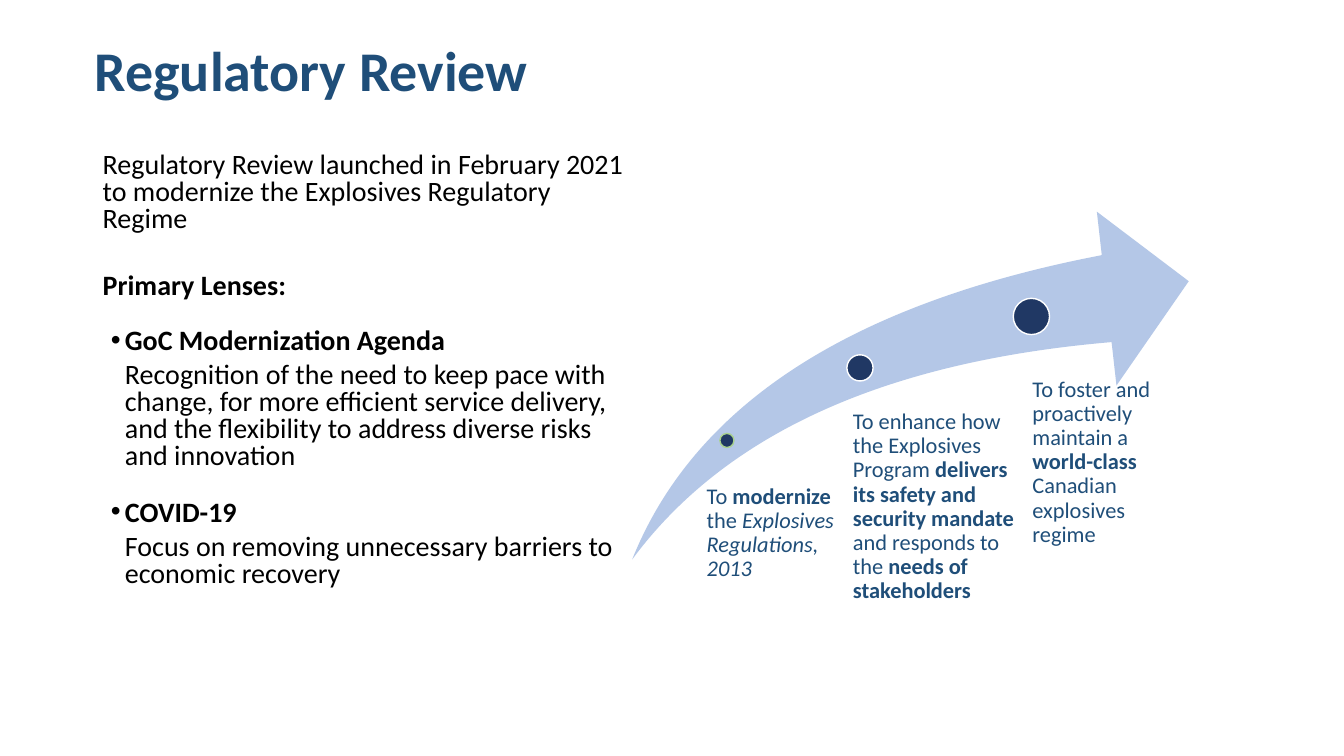
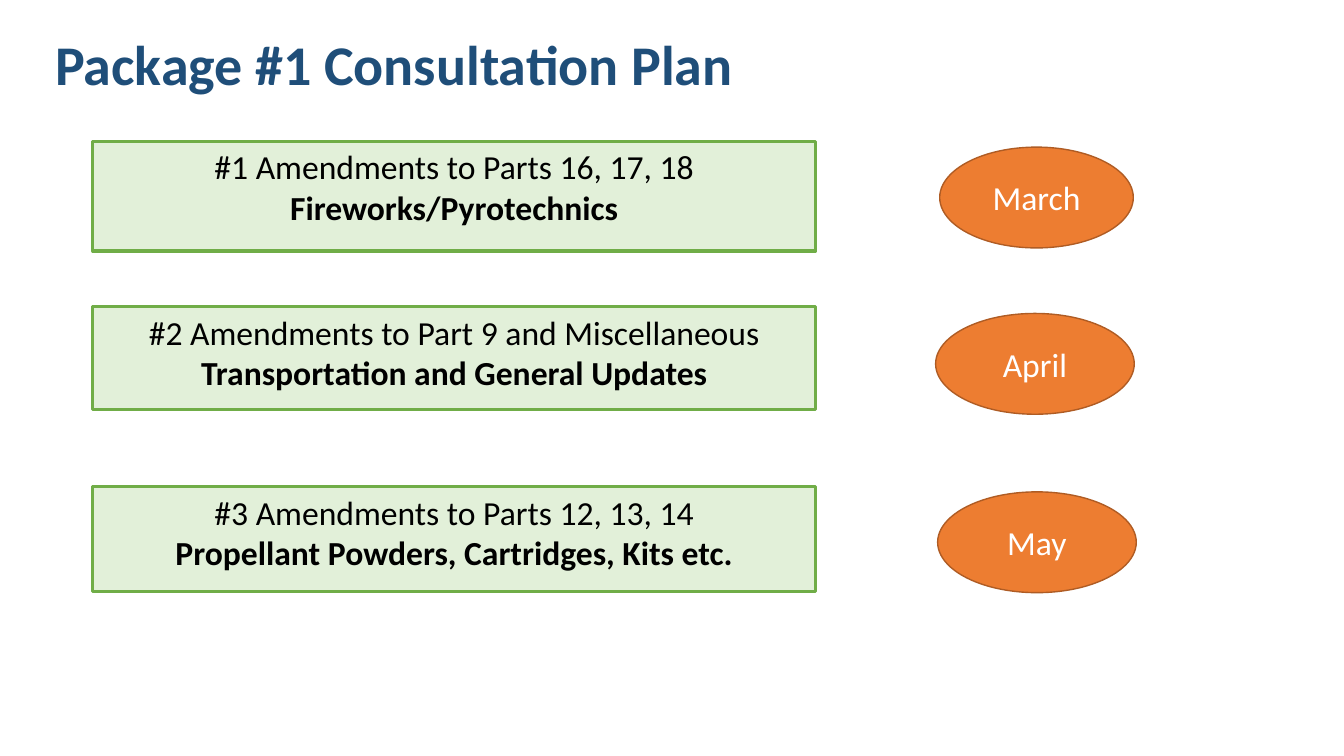
"""Build two slides on the regulatory review and its consultation plan."""
from dataclasses import dataclass

from lxml.etree import SubElement
from pptx import Presentation
from pptx.dml.color import RGBColor
from pptx.enum.shapes import MSO_SHAPE
from pptx.enum.text import MSO_ANCHOR, PP_ALIGN
from pptx.oxml.ns import qn
from pptx.util import Inches, Pt


@dataclass(frozen=True)
class Theme:
    """Hold the colours, font and type sizes that the slides share."""
    font: str = "Calibri"
    navy: str = "1F4E79"
    black: str = "000000"
    white: str = "FFFFFF"
    swoosh: str = "B4C7E7"
    dot: str = "203864"
    dot_green: str = "A9D18E"
    box_fill: str = "E2F0D9"
    box_line: str = "70AD47"
    month_fill: str = "ED7D31"
    month_line: str = "AF5C24"
    title_size: int = 40
    box_size: int = 24
    body_size: int = 20
    label_size: int = 16


THEME = Theme()

BODY = [
    ([("Regulatory Review launched in February 2021 to modernize the Explosives "
       "Regulatory Regime", "")], {}),
    ([("Primary Lenses:", "b")], {"before": 29}),
    ([("GoC Modernization Agenda", "b")], {"before": 20, "left": 0.22, "bullet": "•"}),
    ([("Recognition of the need to keep pace with change, for more efficient service "
       "delivery, and the flexibility to address diverse risks and innovation", "")],
     {"before": 5, "left": 0.22}),
    ([("COVID-19", "b")], {"before": 21.5, "left": 0.22, "bullet": "•"}),
    ([("Focus on removing unnecessary barriers to economic recovery", "")],
     {"before": 5, "left": 0.22}),
]

GOALS = [
    ((7.14, 4.3, 0.14, 0.14), THEME.dot_green, (6.93, 4.81, 1.37, 0.91), 0.08,
     [("To ", ""), ("modernize", "b"), (" the ", ""),
      ("Explosives Regulations, 2013", "i")]),
    ((8.4, 3.52, 0.26, 0.26), THEME.white, (8.32, 4.07, 1.77, 1.81), 0.14,
     [("To enhance how the Explosives Program ", ""),
      ("delivers its safety and security mandate ", "b"),
      ("and responds to the ", ""), ("needs of stakeholders", "b")]),
    ((10.05, 2.96, 0.36, 0.36), THEME.white, (10.05, 3.75, 1.69, 2.03), 0.19,
     [("To foster and proactively maintain a ", ""), ("world-class", "b"),
      (" Canadian explosives regime", "")]),
]

PACKAGES = [
    ("#1 Amendments to Parts 16, 17, 18", "Fireworks/Pyrotechnics", 1.4, 1.09,
     "March", (9.32, 1.46, 1.92, 1)),
    ("#2 Amendments to Part 9 and Miscellaneous", "Transportation and General Updates",
     3.04, 1.02, "April", (9.28, 3.11, 1.97, 1)),
    ("#3 Amendments to Parts 12, 13, 14", "Propellant Powders, Cartridges, Kits etc.",
     4.83, 1.04, "May", (9.3, 4.88, 1.97, 1)),
]


def write_paragraph(frame, runs, *, size, color, align=PP_ALIGN.LEFT, spacing=1.0,
                    before=0, left=0, bullet=None):
    """Write (text, style) runs as the next paragraph of a text frame."""
    first = frame.paragraphs[0]
    paragraph = frame.add_paragraph() if first.runs else first
    if bullet:
        properties = paragraph._p.get_or_add_pPr()
        properties.set("indent", str(Inches(-0.14)))
        SubElement(properties, qn("a:buFont")).set("typeface", "Arial")
        SubElement(properties, qn("a:buChar")).set("char", bullet)
    if left:
        paragraph._p.get_or_add_pPr().set("marL", str(Inches(left)))
    paragraph.alignment = align
    paragraph.line_spacing = spacing
    paragraph.space_before = Pt(before)
    for text, style in runs:
        run = paragraph.add_run()
        run.text = text
        run.font.name = THEME.font
        run.font.size = Pt(size)
        run.font.bold = "b" in style
        run.font.italic = "i" in style
        run.font.color.rgb = RGBColor.from_string(color)


def add_text_box(slide, place, anchor=MSO_ANCHOR.TOP, insets=None):
    """Add a wrapping text box and return its text frame."""
    frame = slide.shapes.add_textbox(*map(Inches, place)).text_frame
    frame.word_wrap = True
    frame.vertical_anchor = anchor
    if insets:
        (frame.margin_left, frame.margin_top,
         frame.margin_right, frame.margin_bottom) = map(Inches, insets)
    return frame


def add_filled_shape(slide, kind, place, fill, line=None, line_width=1,
                     anchor=MSO_ANCHOR.MIDDLE):
    """Add a flat preset shape with an optional outline."""
    shape = slide.shapes.add_shape(kind, *map(Inches, place))
    shape.shadow.inherit = False
    shape.fill.solid()
    shape.fill.fore_color.rgb = RGBColor.from_string(fill)
    if line:
        shape.line.color.rgb = RGBColor.from_string(line)
        shape.line.width = Pt(line_width)
    else:
        shape.line.fill.background()
    shape.text_frame.word_wrap = True
    shape.text_frame.vertical_anchor = anchor
    return shape


def add_titled_slide(presentation, title, place):
    """Add a blank slide with the shared title style."""
    slide = presentation.slides.add_slide(presentation.slide_layouts[6])
    frame = add_text_box(slide, place, MSO_ANCHOR.MIDDLE)
    write_paragraph(frame, [(title, "b")], size=THEME.title_size, color=THEME.navy,
                    spacing=0.9)
    return slide


def add_goal(slide, dot_place, dot_line, label_place, inset, runs):
    """Add one dot on the swoosh and the goal below it."""
    add_filled_shape(slide, MSO_SHAPE.OVAL, dot_place, THEME.dot, dot_line)
    frame = add_text_box(slide, label_place, insets=(inset, 0, 0, 0))
    write_paragraph(frame, runs, size=THEME.label_size, color=THEME.navy, spacing=0.9)


def add_package(slide, heading, topic, top, height, month, month_place):
    """Add one amendment box and its month."""
    box = add_filled_shape(slide, MSO_SHAPE.RECTANGLE, (0.92, top, 7.17, height),
                           THEME.box_fill, THEME.box_line, 2.25, MSO_ANCHOR.TOP)
    oval = add_filled_shape(slide, MSO_SHAPE.OVAL, month_place,
                            THEME.month_fill, THEME.month_line)
    for shape, text, style, color in ((box, heading, "", THEME.black),
                                      (box, topic, "b", THEME.black),
                                      (oval, month, "", THEME.white)):
        write_paragraph(shape.text_frame, [(text, style)], size=THEME.box_size,
                        color=color, align=PP_ALIGN.CENTER)


def build_review(presentation):
    """Build the regulatory review slide."""
    slide = add_titled_slide(presentation, "Regulatory Review", (0.84, 0.29, 10.45, 0.87))
    body = add_text_box(slide, (0.92, 1.47, 5.52, 4.8))
    for runs, layout in BODY:
        write_paragraph(body, runs, size=THEME.body_size, color=THEME.black,
                        spacing=0.8, **layout)
    swoosh = add_filled_shape(slide, MSO_SHAPE.SWOOSH_ARROW, (6.27, 2.1, 5.52, 3.45),
                              THEME.swoosh)
    swoosh.adjustments[0] = swoosh.adjustments[1] = 0.25
    for goal in GOALS:
        add_goal(slide, *goal)


def build_plan(presentation):
    """Build the consultation plan slide."""
    slide = add_titled_slide(presentation, "Package #1 Consultation Plan",
                             (0.45, 0.1, 10.85, 1.13))
    for package in PACKAGES:
        add_package(slide, *package)


def main():
    """Build and save the presentation."""
    presentation = Presentation()
    presentation.slide_width = Inches(13.33)
    presentation.slide_height = Inches(7.5)
    build_review(presentation)
    build_plan(presentation)
    presentation.save("out.pptx")


if __name__ == "__main__":
    main()
